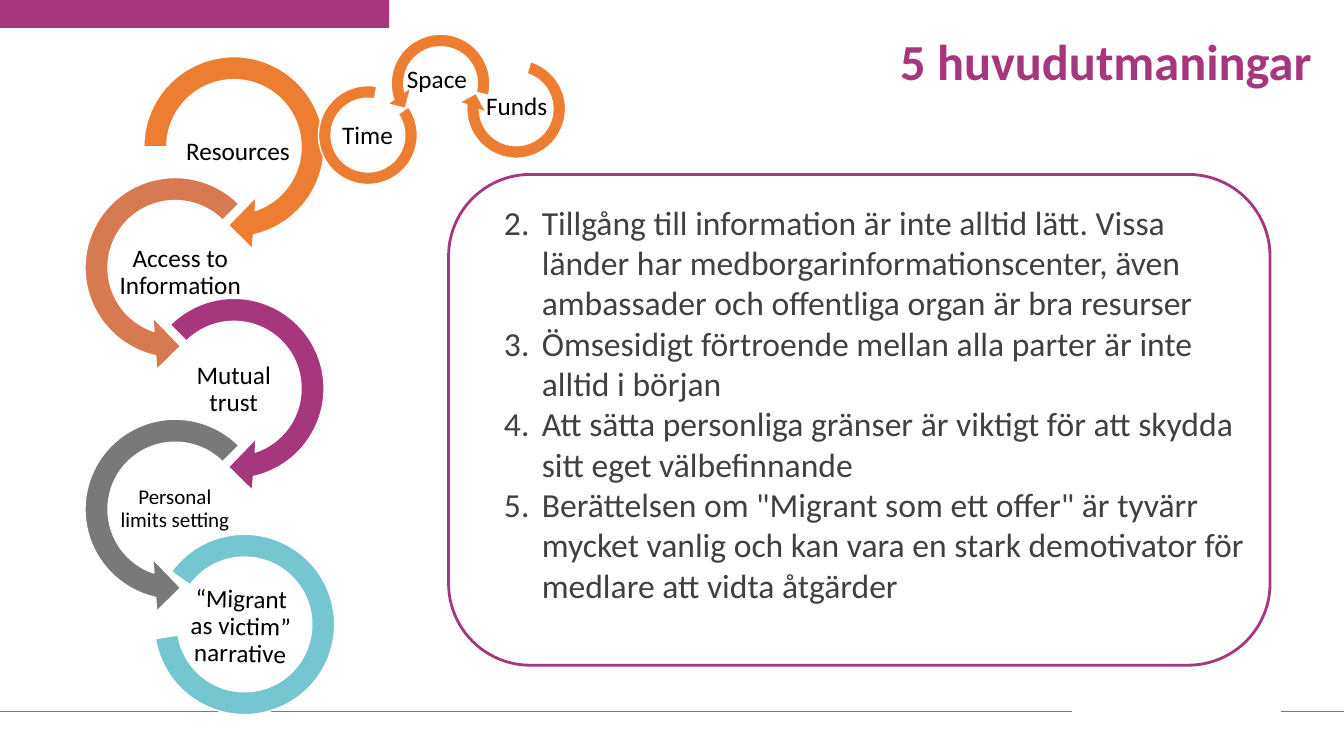
import pptx
import pptx.dml.color
import pptx.enum.shapes
import pptx.enum.text
import pptx.oxml
import pptx.oxml.ns
import pptx.util
import lxml.etree

Pt = pptx.util.Pt
RGB = pptx.dml.color.RGBColor
KIND = pptx.enum.shapes.MSO_SHAPE
LINK = pptx.enum.shapes.MSO_CONNECTOR
ALIGN = pptx.enum.text.PP_ALIGN
MID = pptx.enum.text.MSO_ANCHOR.MIDDLE
TOP = pptx.enum.text.MSO_ANCHOR.TOP
FIXED = pptx.enum.text.MSO_AUTO_SIZE.NONE
qn = pptx.oxml.ns.qn

PLUM = RGB(0xA6, 0x37, 0x7D)
ORANGE = RGB(0xED, 0x7D, 0x31)
COPPER = RGB(0xD8, 0x7A, 0x51)
GREY = RGB(0x79, 0x79, 0x79)
TEAL = RGB(0x76, 0xC6, 0xD2)
INK = RGB(0x40, 0x40, 0x40)
BLACK = RGB(0, 0, 0)
WHITE = RGB(255, 255, 255)

# Ring forms: preset shape and its adjustments
RIGHT = (KIND.CIRCULAR_ARROW, (0.11, 11.42, 45, 135, 0.125))
START = (KIND.CIRCULAR_ARROW, (0.11, 11.42, 45, 108, 0.125))
LEFT = (KIND.LEFT_CIRCULAR_ARROW, (0.11, 11.42, 63, 189, 0.125))
ARC = (KIND.BLOCK_ARC, (135, 108, 0.127))

BIG, SMALL = (83.5, 42), (46, 23)

# Arrows of the chain: form, colour, text, text size, label offset, label size
CHAIN = [
    (START, ORANGE, "Resources", 18, (36, 57.6), BIG),
    (LEFT, COPPER, "Access to Information", 18, (21, 57.6), (115, 42)),
    (RIGHT, PLUM, "Mutual trust", 18, (33, 55), BIG),
    (LEFT, GREY, "Personal limits setting", 15, (33, 54), BIG),
]

# Small rings: box, turn, form, text, label offset
NEEDS = [
    ((327.6, 36.7, 82.1), 107.1, START, "Funds", (18.5, 28.8)),
    ((273.6, 18.7, 82.1), 58.8, LEFT, "Space", (15.5, 27.4)),
    ((227.5, 61.2, 70.6), 100.2, ARC, "Time", (12, 24.5)),
]

POINTS = [
    "Tillgång till information är inte alltid lätt. Vissa länder har "
    "medborgarinformationscenter, även ambassader och offentliga organ är bra resurser",
    "Ömsesidigt förtroende mellan alla parter är inte alltid i början",
    "Att sätta personliga gränser är viktigt för att skydda sitt eget välbefinnande",
    'Berättelsen om "Migrant som ett offer" är tyvärr mycket vanlig och kan vara '
    "en stark demotivator för medlare att vidta åtgärder",
]


def apply(thing, values):
    for name, value in values.items():
        setattr(thing, name, value)


def style(para, size, tint, bold=False, **values):
    apply(para, {"space_before": Pt(0), "space_after": Pt(0), **values})
    apply(para.font, {"name": "Calibri", "size": Pt(size), "bold": bold})
    para.font.color.rgb = tint


def place(shape, x, y, w, h):
    apply(shape, {"left": Pt(x), "top": Pt(y), "width": Pt(w), "height": Pt(h)})


def draw(slide, kind, box, fill=None, line=None, weight=1):
    shape = slide.shapes.add_shape(kind, *map(Pt, box))
    shape.shadow.inherit = False
    for part, tint in ((shape.fill, fill), (shape.line.fill, line)):
        if tint is None:
            part.background()
        else:
            part.solid()
            part.fore_color.rgb = tint
    if line is not None:
        shape.line.width = Pt(weight)
    return shape


def add_ring(slide, box, form, fill, text, size, shift, room, turn=0, tilt=0):
    x, y, side = box
    kind, adjust = form
    ring = draw(slide, kind, (x, y, side, side), fill, WHITE)
    ring.rotation = turn
    for i, value in enumerate(adjust):
        ring.adjustments[i] = value
    label = slide.shapes.add_textbox(Pt(x + shift[0]), Pt(y + shift[1]), *map(Pt, room))
    label.rotation = tilt
    frame = label.text_frame
    apply(frame, {"word_wrap": True, "vertical_anchor": MID, "text": text})
    apply(frame, {f"margin_{side}": Pt(0.7) for side in ("left", "top", "right", "bottom")})
    style(frame.paragraphs[0], size, BLACK, alignment=ALIGN.CENTER, line_spacing=0.9)


def add_trim(slide, wide):
    # Top bar and foot rule
    draw(slide, KIND.RECTANGLE, (0, 0, 278, 20), PLUM)
    for start, end in ((0, 765.4), (915, wide)):
        rule = slide.shapes.add_connector(LINK.STRAIGHT, Pt(start), Pt(508.3), Pt(end), Pt(508.3))
        rule.line.color.rgb = GREY
        rule.line.width = Pt(0.5)
        lxml.etree.SubElement(rule._element.spPr, qn("a:effectLst"))


def add_title(slide, box):
    title = slide.shapes.title
    place(title, *box)
    frame = title.text_frame
    apply(frame, {"text": "5 huvudutmaningar", "vertical_anchor": TOP,
                  "word_wrap": True, "auto_size": FIXED})
    style(frame.paragraphs[0], 36, PLUM, True, alignment=ALIGN.LEFT, line_spacing=0.9)


def add_chain(slide, x, y):
    # Arrows swing right and left on the way down
    for i, (form, fill, text, size, shift, room) in enumerate(CHAIN):
        box = (x + (0 if i % 2 else 42), y + 86.3 * i, 149.8)
        add_ring(slide, box, form, fill, text, size, shift, room)
    add_ring(slide, (x + 60, y + 351.6, 128.9), ARC, TEAL,
             "“Migrant as victim” narrative", 18, (20, 45.4), BIG, 350.9, 1.3)


def add_needs(slide):
    for box, turn, form, text, shift in NEEDS:
        add_ring(slide, box, form, ORANGE, text, 18, shift, SMALL, turn)


def add_list(slide, x, y, w, h):
    # Numbered list within a round frame
    draw(slide, KIND.ROUNDED_RECTANGLE, (x, y, w, h), line=PLUM, weight=2)
    body = slide.placeholders[1]
    place(body, x + 32.4, y + 15.8, w - 38.2, h - 52.6)
    frame = body.text_frame
    apply(frame, {"text": "\n".join(POINTS), "word_wrap": True,
                  "auto_size": FIXED, "vertical_anchor": TOP})
    for para in frame.paragraphs:
        props = para._p.get_or_add_pPr()
        props.set("marL", str(Pt(27)))
        props.set("indent", str(Pt(-27)))
        lxml.etree.SubElement(props, qn("a:buFont"), typeface="+mj-lt")
        lxml.etree.SubElement(props, qn("a:buAutoNum"), type="arabicPeriod", startAt="2")
        style(para, 24, INK, alignment=ALIGN.LEFT)


def main():
    deck = pptx.Presentation()
    apply(deck, {"slide_width": Pt(960), "slide_height": Pt(540)})
    slide = deck.slides.add_slide(deck.slide_layouts[1])
    add_trim(slide, 960)
    add_title(slide, (635.8, 23, 311, 85))
    add_chain(slide, 50.2, 30)
    add_needs(slide)
    add_list(slide, 320.4, 124.6, 586.8, 350.6)
    deck.save("out.pptx")


if __name__ == "__main__":
    main()
